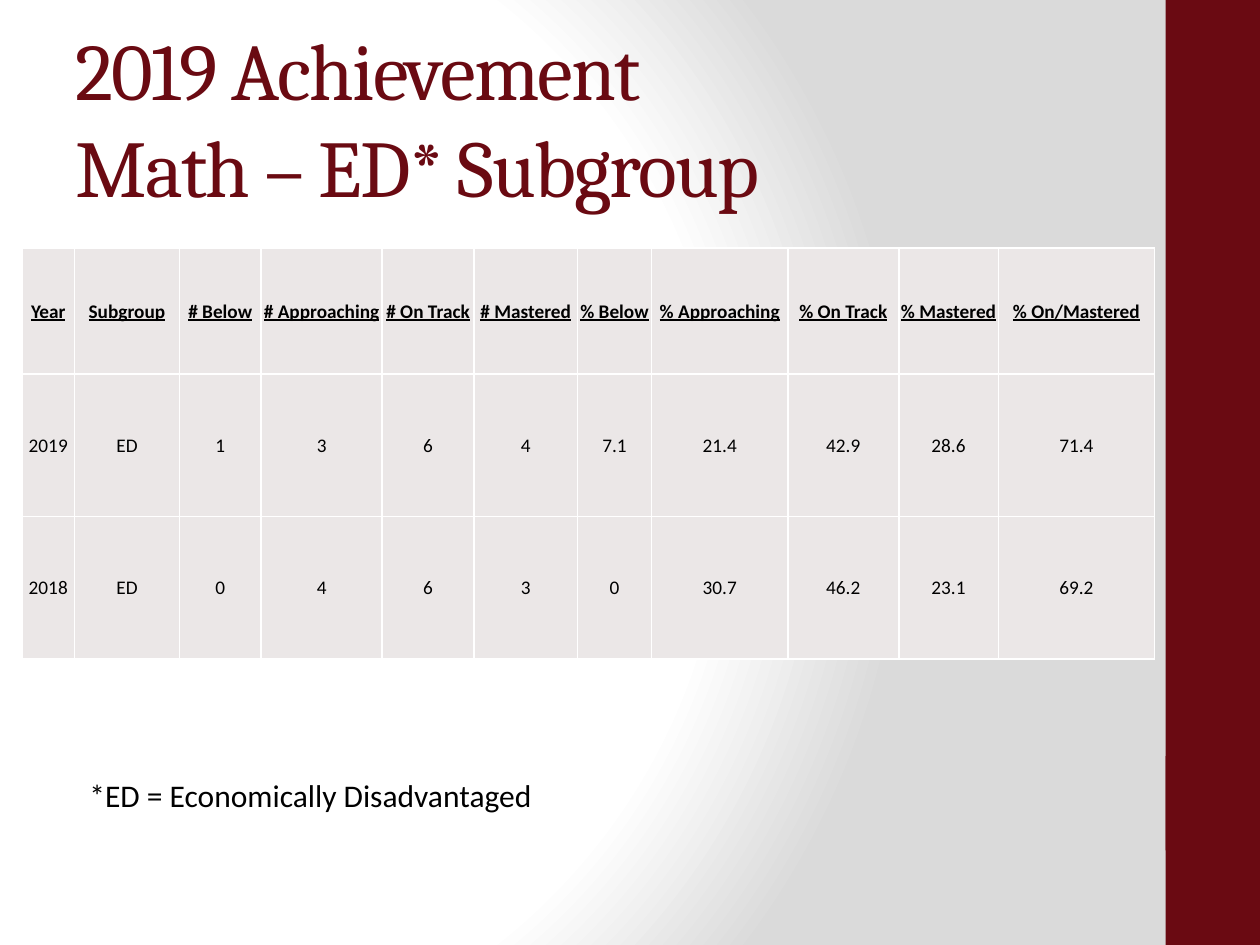
from dataclasses import dataclass

from pptx import Presentation
from pptx.dml.color import RGBColor
from pptx.enum import shapes, text
from pptx.oxml import parse_xml
from pptx.oxml.ns import nsdecls
from pptx.util import Pt


@dataclass(frozen=True)
class Theme:
    maroon: str = "6A0A12"
    cell: str = "EBE7E7"
    ink: str = "000000"
    white: str = "FFFFFF"
    gray: str = "DADADA"
    heading: str = "Cambria"
    body: str = "Calibri"
    title_size: float = 46
    note_size: float = 18
    table_size: float = 11


@dataclass(frozen=True)
class Box:
    left: float
    top: float
    width: float
    height: float

    def lengths(self) -> tuple:
        return Pt(self.left), Pt(self.top), Pt(self.width), Pt(self.height)


@dataclass(frozen=True)
class Column:
    heading: str
    width: float
    values: tuple


THEME = Theme()
SIDE_BARS = (Box(666, 0, 54, 540), Box(666, 432, 54, 54))
TITLE_BOX = Box(36, 21.6, 600, 90)
NOTE_BOX = Box(44, 440, 270, 51)
TABLE_LEFT, TABLE_TOP = 12.5, 141.8
ROW_HEIGHTS = (72, 81.4, 81.4)
COLUMNS = (
    Column("Year", 30.2, ("2019", "2018")),
    Column("Subgroup", 59.8, ("ED", "ED")),
    Column("# Below", 46.8, ("1", "0")),
    Column("# Approaching", 69.1, ("3", "4")),
    Column("# On Track", 52.6, ("6", "6")),
    Column("# Mastered", 59, ("4", "3")),
    Column("% Below", 42.5, ("7.1", "0")),
    Column("% Approaching", 77.8, ("21.4", "30.7")),
    Column("% On Track", 63.4, ("42.9", "46.2")),
    Column("% Mastered", 56.9, ("28.6", "23.1")),
    Column("% On/Mastered", 89.3, ("71.4", "69.2")),
)


def apply(target, values: dict) -> None:
    for name, value in values.items():
        setattr(target, name, value)


def format_font(font, name: str, size: float, color: str, **extra) -> None:
    apply(font, {"name": name, "size": Pt(size), **extra})
    font.color.rgb = RGBColor.from_string(color)


def paint_background(s) -> None:
    """Fill the slide with a circular gradient centred towards the left."""
    stops = "".join(
        f'<a:gs pos="{pos * 1000}"><a:srgbClr val="{color}"/></a:gs>'
        for pos, color in ((0, THEME.white), (75, THEME.white), (100, THEME.gray)))
    s.element.cSld.insert(0, parse_xml(
        f'<p:bg {nsdecls("p", "a")}><p:bgPr><a:gradFill rotWithShape="1">'
        f'<a:gsLst>{stops}</a:gsLst><a:path path="circle">'
        '<a:fillToRect l="20000" t="50000" r="100000" b="50000"/></a:path>'
        '</a:gradFill><a:effectLst/></p:bgPr></p:bg>'))


def add_bar(s, box: Box) -> None:
    sp = s.shapes.add_shape(shapes.MSO_SHAPE.RECTANGLE, *box.lengths())
    sp.shadow.inherit = False
    sp.fill.solid()
    sp.fill.fore_color.rgb = RGBColor.from_string(THEME.maroon)
    sp.line.fill.background()


def add_title(s, wording: str) -> None:
    sp = s.shapes.title
    apply(sp, dict(zip(("left", "top", "width", "height"), TITLE_BOX.lengths())))
    tf = sp.text_frame
    tf.text = wording
    apply(tf, {"word_wrap": True, "auto_size": text.MSO_AUTO_SIZE.NONE,
               "vertical_anchor": text.MSO_ANCHOR.MIDDLE})
    p = tf.paragraphs[0]
    p.alignment = text.PP_ALIGN.LEFT
    for r in p.runs:
        format_font(r.font, THEME.heading, THEME.title_size, THEME.maroon)
        r.font._element.set("spc", "-100")


def add_note(s, wording: str) -> None:
    tf = s.shapes.add_textbox(*NOTE_BOX.lengths()).text_frame
    tf.text = wording
    tf.word_wrap = False
    format_font(tf.paragraphs[0].runs[0].font, THEME.body, THEME.note_size, THEME.ink)


def fill_cell(cell, wording: str, heading: bool) -> None:
    cell.text = wording
    apply(cell, {"vertical_anchor": text.MSO_ANCHOR.MIDDLE,
                 "margin_left": Pt(0.7), "margin_right": Pt(0.7),
                 "margin_top": Pt(0.7), "margin_bottom": Pt(0)})
    p = cell.text_frame.paragraphs[0]
    p.alignment = text.PP_ALIGN.CENTER
    format_font(p.runs[0].font, THEME.body, THEME.table_size, THEME.ink,
                bold=heading, underline=heading)
    tc_pr = cell._tc.get_or_add_tcPr()
    for side in "LRTB":
        tc_pr.append(parse_xml(
            f'<a:ln{side} {nsdecls("a")} w="{Pt(1)}"><a:solidFill>'
            f'<a:srgbClr val="{THEME.white}"/></a:solidFill></a:ln{side}>'))
    cell.fill.solid()
    cell.fill.fore_color.rgb = RGBColor.from_string(THEME.cell)


def add_results_table(s) -> None:
    box = Box(TABLE_LEFT, TABLE_TOP, sum(c.width for c in COLUMNS), sum(ROW_HEIGHTS))
    table = s.shapes.add_table(len(ROW_HEIGHTS), len(COLUMNS), *box.lengths()).table
    apply(table, {"first_row": False, "horz_banding": False})
    for row, height in zip(table.rows, ROW_HEIGHTS):
        row.height = Pt(height)
    for i, column in enumerate(COLUMNS):
        table.columns[i].width = Pt(column.width)
        for j, wording in enumerate((column.heading, *column.values)):
            fill_cell(table.cell(j, i), wording, heading=j == 0)


def main() -> None:
    prs = Presentation()
    apply(prs, {"slide_width": Pt(720), "slide_height": Pt(540)})
    s = prs.slides.add_slide(prs.slide_layouts.get_by_name("Title Only"))
    paint_background(s)
    for bar in SIDE_BARS:
        add_bar(s, bar)
    add_title(s, "2019 Achievement \vMath – ED* Subgroup")
    add_note(s, "*ED = Economically Disadvantaged")
    add_results_table(s)
    prs.save("out.pptx")


if __name__ == "__main__":
    main()
